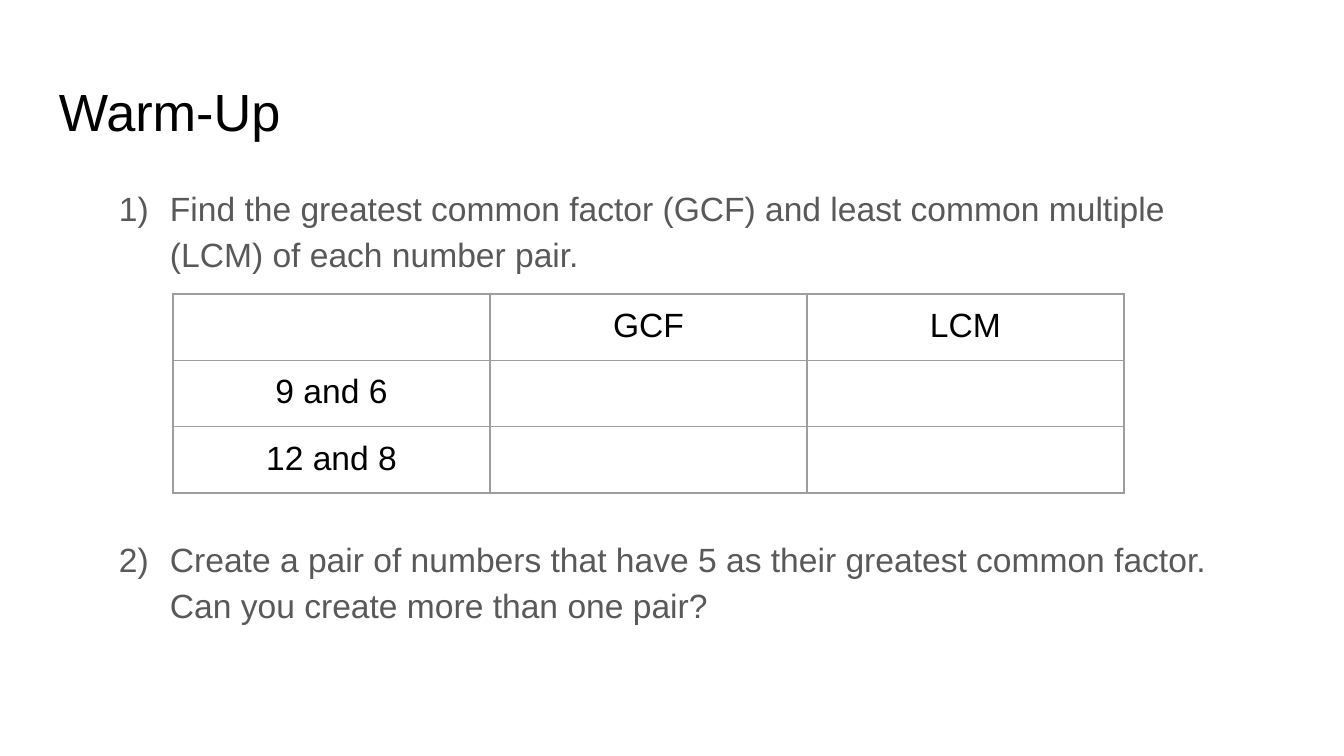
from lxml.etree import SubElement
from pptx import Presentation
from pptx.dml.color import RGBColor
from pptx.enum.text import MSO_ANCHOR, PP_ALIGN
from pptx.oxml.ns import qn
from pptx.util import Pt

PX = 6804
INSET = 13
FONT = "Arial"
BLACK, GREY, RULE = "000000", "595959", "9E9E9E"


def px(n):
    """Turn whole pixels into EMU."""
    return n * PX


def rgb(code):
    """Turn a hex string into a colour."""
    return RGBColor.from_string(code)


def add_run(p, text, size, color):
    """Add one styled run to a paragraph."""
    r = p.add_run()
    r.text = text
    r.font.name, r.font.size = FONT, Pt(size)
    r.font.color.rgb = rgb(color)


def set_margins(item):
    """Give a text frame or table cell equal insets."""
    item.margin_left = item.margin_right = px(INSET)
    item.margin_top = item.margin_bottom = px(INSET)


def add_box(slide, box):
    """Add a wrapping text box and return its text frame."""
    tf = slide.shapes.add_textbox(*map(px, box)).text_frame
    tf.word_wrap = True
    tf.vertical_anchor = MSO_ANCHOR.TOP
    set_margins(tf)
    return tf


def add_title(slide, box, text):
    """Place the slide title in its box."""
    add_run(add_box(slide, box).paragraphs[0], text, 28, BLACK)


def add_questions(slide, box, questions, gap):
    """Place numbered questions, leaving a gap in px between them."""
    tf = add_box(slide, box)
    for i, question in enumerate(questions):
        p = tf.add_paragraph() if i else tf.paragraphs[0]
        p.line_spacing = 1.15
        p.space_before = px(gap) if i else 0
        pPr = p._p.get_or_add_pPr()
        pPr.set("marL", str(px(67)))
        pPr.set("indent", str(px(-51)))
        color = SubElement(pPr, qn("a:buClr"))
        SubElement(color, qn("a:srgbClr"), val=GREY)
        SubElement(pPr, qn("a:buFont"), typeface=FONT)
        SubElement(pPr, qn("a:buAutoNum"), type="arabicParenR", startAt=str(i + 1))
        add_run(p, question, 18, GREY)


def set_borders(cell):
    """Draw thin grey lines on all four sides of a cell."""
    tcPr = cell._tc.get_or_add_tcPr()
    for i, side in enumerate(("lnL", "lnR", "lnT", "lnB")):
        ln = tcPr.makeelement(qn(f"a:{side}"), {"w": str(Pt(0.75))})
        fill = SubElement(ln, qn("a:solidFill"))
        SubElement(fill, qn("a:srgbClr"), val=RULE)
        tcPr.insert(i, ln)


def add_answer_table(slide, box, rows):
    """Place the answer grid with equal rows and columns."""
    left, top, width, height = map(px, box)
    table = slide.shapes.add_table(len(rows), len(rows[0]), left, top, width, height).table
    table.first_row = table.horz_banding = False
    for i, row in enumerate(rows):
        for j, text in enumerate(row):
            cell = table.cell(i, j)
            cell.fill.background()
            set_margins(cell)
            set_borders(cell)
            if text:
                p = cell.text_frame.paragraphs[0]
                p.alignment = PP_ALIGN.CENTER
                add_run(p, text, 18, BLACK)


def main():
    """Build and save the slide."""
    prs = Presentation()
    prs.slide_width, prs.slide_height = px(1344), px(756)
    slide = prs.slides.add_slide(prs.slide_layouts[6])
    slide.background.fill.solid()
    slide.background.fill.fore_color.rgb = rgb("FFFFFF")
    add_title(slide, (46, 66, 1252, 85), "Warm-Up")
    add_questions(slide, (90, 169, 1149, 503), [
        "Find the greatest common factor (GCF) and least common multiple (LCM) of each number pair.",
        "Create a pair of numbers that have 5 as their greatest common factor. Can you create more than one pair?",
    ], 258)
    add_answer_table(slide, (173, 294, 951, 192), [
        ["", "GCF", "LCM"],
        ["9 and 6", "", ""],
        ["12 and 8", "", ""],
    ])
    prs.save("out.pptx")


if __name__ == "__main__":
    main()
